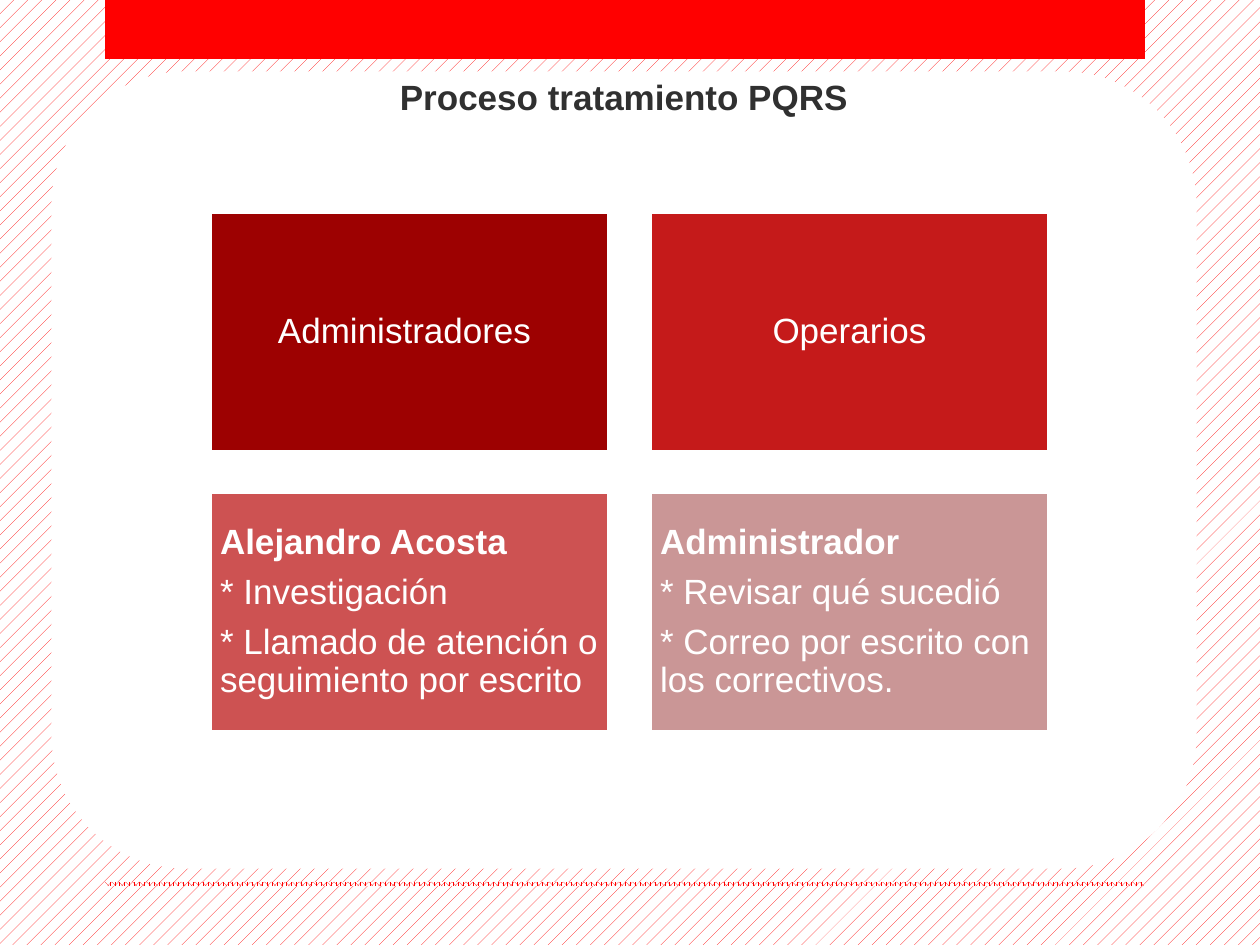
"""Builds the slide on how PQRS are handled, with a two by two grid of cards."""
from dataclasses import dataclass

from pptx import Presentation
from pptx.dml.color import RGBColor as Rgb
from pptx.enum.dml import MSO_PATTERN as Pat
from pptx.enum.shapes import MSO_SHAPE as Geo
from pptx.enum.text import MSO_ANCHOR as Anchor, MSO_AUTO_SIZE as Fit, PP_ALIGN as Align
from pptx.util import Pt

TITLE = "Proceso tratamiento PQRS"
CARDS = [
    ("9D0101", Align.CENTER, [("Administradores ", False)]),
    ("C51A1A", Align.CENTER, [("Operarios", False)]),
    ("CD5252", Align.LEFT, [
        ("Alejandro Acosta", True),
        ("* Investigación", False),
        ("* Llamado de atención o seguimiento por escrito", False),
    ]),
    ("CA9696", Align.LEFT, [
        ("Administrador", True),
        ("* Revisar qué sucedió", False),
        ("* Correo por escrito con los correctivos.", False),
    ]),
]

BAR = (105, 0, 1040, 59)
STRIP = (105, 882, 1040, 4)
PANEL = (53, 73, 1142, 794)
HEAD = (111, 69, 1026, 55)
LEFT, TOP, WIDE, HIGH, GAP, COLS, INSET = 210, 213, 399, 239, 41, 2, 10


@dataclass(frozen=True)
class Theme:
    red: str = "FF0000"
    white: str = "FFFFFF"
    ink: str = "303030"
    font: str = "Arial"
    size: int = 20
    after: int = 7
    edge: float = 1.75


LOOK = Theme()


def px(num):
    return round(num * 914400 / 126)


def tint(hue):
    return Rgb.from_string(hue)


def hatch(fill, kind):
    fill.patterned()
    fill.pattern = kind
    fill.fore_color.rgb = tint(LOOK.red)
    fill.back_color.rgb = tint(LOOK.white)


def block(slide, box, hue=None, edge=False, geo=Geo.RECTANGLE):
    shape = slide.shapes.add_shape(geo, *map(px, box))
    shape.shadow.inherit = False
    if hue:
        shape.fill.solid()
        shape.fill.fore_color.rgb = tint(hue)
    if edge:
        shape.line.color.rgb = tint(LOOK.white)
        shape.line.width = Pt(LOOK.edge)
    else:
        shape.line.fill.background()
    return shape


def write(para, text, hue, bold, align):
    para.alignment = align
    run = para.add_run()
    run.text = text
    font = run.font
    font.name, font.size, font.bold = LOOK.font, Pt(LOOK.size), bold
    font.color.rgb = tint(hue)


def card(slide, num, hue, align, lines):
    row, col = divmod(num, COLS)
    box = (LEFT + col * (WIDE + GAP), TOP + row * (HIGH + GAP), WIDE, HIGH)
    frame = block(slide, box, hue, edge=True).text_frame
    frame.word_wrap = True
    frame.vertical_anchor = Anchor.MIDDLE
    frame.margin_left = frame.margin_right = px(INSET)
    frame.margin_top = frame.margin_bottom = px(INSET)
    for i, (text, bold) in enumerate(lines):
        para = frame.add_paragraph() if i else frame.paragraphs[0]
        para.line_spacing = 0.9
        para.space_after = Pt(LOOK.after)
        write(para, text, LOOK.white, bold, align)


def head(slide):
    title = slide.shapes.title
    title.left, title.top, title.width, title.height = map(px, HEAD)
    frame = title.text_frame
    frame.word_wrap = True
    frame.auto_size = Fit.NONE
    frame.vertical_anchor = Anchor.TOP
    write(frame.paragraphs[0], TITLE, LOOK.ink, True, Align.CENTER)
    slide.shapes._spTree.append(title._element)


def main():
    deck = Presentation()
    deck.slide_width, deck.slide_height = px(1260), px(945)
    slide = deck.slides.add_slide(deck.slide_layouts[5])
    hatch(slide.background.fill, Pat.PERCENT_10)
    hatch(block(slide, STRIP).fill, Pat.PERCENT_75)
    block(slide, BAR, LOOK.red)
    block(slide, PANEL, LOOK.white, edge=True, geo=Geo.ROUNDED_RECTANGLE)
    head(slide)
    for num, item in enumerate(CARDS):
        card(slide, num, *item)
    deck.save("out.pptx")


if __name__ == "__main__":
    main()
